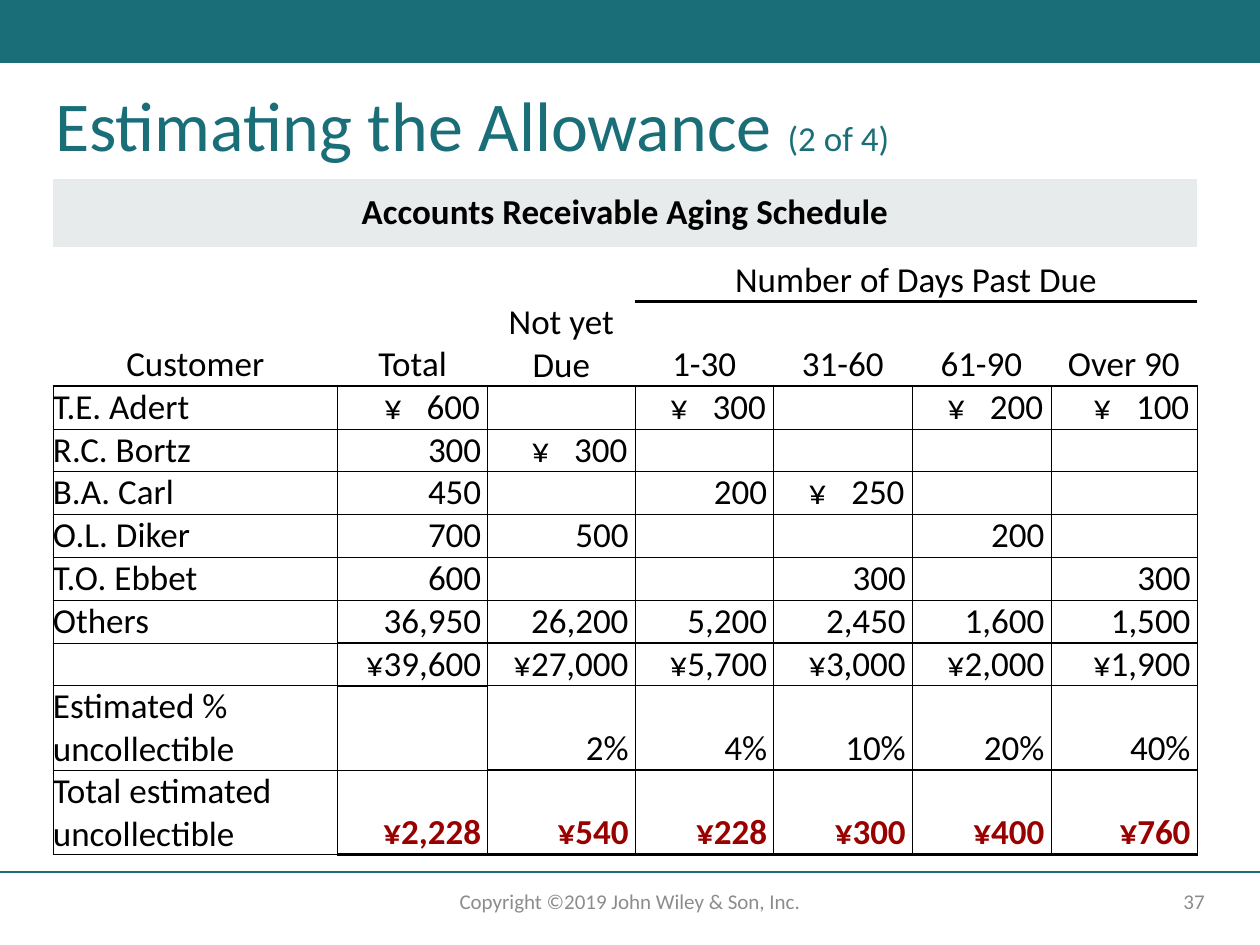
from dataclasses import dataclass
from itertools import product

from lxml import etree
from pptx import Presentation
from pptx.dml.color import RGBColor
from pptx.enum import shapes, text
from pptx.oxml import ns
from pptx.util import Inches, Pt

TEAL = RGBColor(0x19, 0x6E, 0x78)
GRAY = RGBColor(0x8C, 0x8C, 0x8C)
PALE = RGBColor(0xE8, 0xEB, 0xEC)
BLACK = RGBColor(0, 0, 0)
RED = RGBColor(0x99, 0, 0)
LEFT, MID, RIGHT = text.PP_ALIGN.LEFT, text.PP_ALIGN.CENTER, text.PP_ALIGN.RIGHT

WIDTHS = [2.26, 1.19, 1.17, 1.1, 1.1, 1.1, 1.16]
HEIGHTS = [0.54, 0.43, 0.67] + [0.34] * 7 + [0.67] * 2
HEADS = 3  # header rows, without a grid
THIN, THICK = 0.25, 1.5
# Columns that have a thick rule under them, by row
RULES = {1: range(3, 7), 2: range(7), 8: range(1, 7),
         9: range(1, 2), 10: range(2, 7), 11: range(1, 7)}

# A tab parts a currency sign from its amount
ROWS = [
    ["Accounts Receivable Aging Schedule"] + [""] * 6,
    ["", "", "", "Number of Days Past Due", "", "", ""],
    ["Customer", "Total", "Not yet\nDue", "1-30", "31-60", "61-90", "Over 90"],
    ["T.E. Adert", "¥\t600", "", "¥\t300", "", "¥\t200", "¥\t100"],
    ["R.C. Bortz", "300", "¥\t300", "", "", "", ""],
    ["B.A. Carl", "450", "", "200", "¥\t250", "", ""],
    ["O.L. Diker", "700", "500", "", "", "200", ""],
    ["T.O. Ebbet", "600", "", "", "300", "", "300"],
    ["Others", "36,950", "26,200", "5,200", "2,450", "1,600", "1,500"],
    ["", "¥39,600", "¥27,000", "¥5,700", "¥3,000", "¥2,000", "¥1,900"],
    ["Estimated %\nuncollectible", "", "2%", "4%", "10%", "20%", "40%"],
    ["Total estimated\nuncollectible",
     "¥2,228", "¥540", "¥228", "¥300", "¥400", "¥760"],
]


@dataclass
class Label:
    words: str
    box: tuple[float, float, float, float]
    size: int
    color: RGBColor
    align: text.PP_ALIGN
    anchor: text.MSO_ANCHOR
    space: float = 1.0


LABELS = [
    Label("37", (7.06, 6.95, 2.6, 0.4), 12, GRAY, RIGHT, text.MSO_ANCHOR.MIDDLE),
    Label("Copyright ©2019 John Wiley & Son, Inc.", (3.31, 6.95, 3.38, 0.4),
          12, GRAY, MID, text.MSO_ANCHOR.MIDDLE),
    Label("Estimating the Allowance ", (0.34, 0.67, 9.49, 0.71),
          40, TEAL, LEFT, text.MSO_ANCHOR.TOP, 0.9),
]


def add_run(para, words: str, *, size: int = 20, color: RGBColor = BLACK,
            bold: bool = False) -> None:
    run = para.add_run()
    run.text = words
    font = run.font
    font.name, font.size, font.bold = "Calibri", Pt(size), bold
    font.color.rgb = color


def add_label(slide, label: Label):
    frame = slide.shapes.add_textbox(*map(Inches, label.box)).text_frame
    frame.word_wrap = True
    frame.vertical_anchor = label.anchor
    para = frame.paragraphs[0]
    para.alignment, para.line_spacing = label.align, label.space
    add_run(para, label.words, size=label.size, color=label.color)
    return para


def set_tabs(para, stops: list[float]) -> None:
    """Add right-aligned tab stops, in inches."""
    tabs = etree.SubElement(para._p.get_or_add_pPr(), ns.qn("a:tabLst"))
    for stop in stops:
        etree.SubElement(tabs, ns.qn("a:tab"), pos=str(Inches(stop)), algn="r")


def edge(row: int, col: int) -> float:
    """Give the width in points of the line under a cell."""
    if col in RULES.get(row, ()):
        return THICK
    return THIN if row >= HEADS else 0


def set_lines(cell, row: int, col: int) -> None:
    side = THIN if row >= HEADS else 0
    sides = {"L": side, "R": side, "T": edge(row - 1, col), "B": edge(row, col)}
    props = cell._tc.get_or_add_tcPr()
    for name, width in sides.items():
        line = etree.SubElement(props, ns.qn("a:ln" + name), w=str(Pt(width)))
        if width:
            fill = etree.SubElement(line, ns.qn("a:solidFill"))
            etree.SubElement(fill, ns.qn("a:srgbClr"), val=str(BLACK))
        else:
            etree.SubElement(line, ns.qn("a:noFill"))


def fill_cell(cell, row: int, col: int) -> None:
    words = ROWS[row][col]
    number = row >= HEADS and col > 0
    set_lines(cell, row, col)
    if row == 0:
        cell.fill.solid()
        cell.fill.fore_color.rgb = PALE
    else:
        cell.fill.background()
    cell.vertical_anchor = text.MSO_ANCHOR.BOTTOM
    cell.margin_left = 0
    cell.margin_top = Inches(0.1 if row < 2 else 0)
    cell.margin_right = Inches(0.05 if number else 0)
    cell.margin_bottom = Inches(0.1 if row == 0 else 0)
    if not words:
        return
    frame = cell.text_frame
    align = MID if row < HEADS else RIGHT if number else LEFT
    last = number and row == len(ROWS) - 1
    for i, part in enumerate(words.split("\n")):
        para = frame.add_paragraph() if i else frame.paragraphs[0]
        para.alignment = align
        if "\t" in part:
            para.alignment = LEFT
            set_tabs(para, [WIDTHS[col] - 0.68, WIDTHS[col] - 0.06])
            part = "\t" + part
        add_run(para, part, color=RED if last else BLACK, bold=last or row == 0)


def add_grid(slide) -> None:
    frame = slide.shapes.add_table(
        len(ROWS), len(WIDTHS), Inches(0.42), Inches(1.42),
        Inches(sum(WIDTHS)), Inches(sum(HEIGHTS)))
    table = frame.table
    table.first_row = table.horz_banding = False
    for column, width in zip(table.columns, WIDTHS):
        column.width = Inches(width)
    for line, height in zip(table.rows, HEIGHTS):
        line.height = Inches(height)
    table.cell(0, 0).merge(table.cell(0, 6))
    table.cell(1, 3).merge(table.cell(1, 6))
    for row, col in product(range(len(ROWS)), range(len(WIDTHS))):
        fill_cell(table.cell(row, col), row, col)


def add_frame(slide) -> None:
    """Draw the top band and the footer line."""
    band = slide.shapes.add_shape(
        shapes.MSO_SHAPE.RECTANGLE, 0, 0, Inches(10), Inches(0.5))
    band.shadow.inherit = False
    band.fill.solid()
    band.fill.fore_color.rgb = TEAL
    band.line.fill.background()
    rule = slide.shapes.add_connector(
        shapes.MSO_CONNECTOR.STRAIGHT, 0, Inches(6.92), Inches(10), Inches(6.92))
    rule.line.color.rgb = TEAL
    rule.line.width = Pt(1)
    etree.SubElement(rule._element.spPr, ns.qn("a:effectLst"))


def main() -> None:
    deck = Presentation()
    deck.slide_width, deck.slide_height = Inches(10), Inches(7.5)
    slide = deck.slides.add_slide(deck.slide_layouts[6])
    add_frame(slide)
    *_, title = [add_label(slide, label) for label in LABELS]
    add_run(title, "(2 of 4)", color=TEAL)
    add_grid(slide)
    deck.save("out.pptx")


if __name__ == "__main__":
    main()
